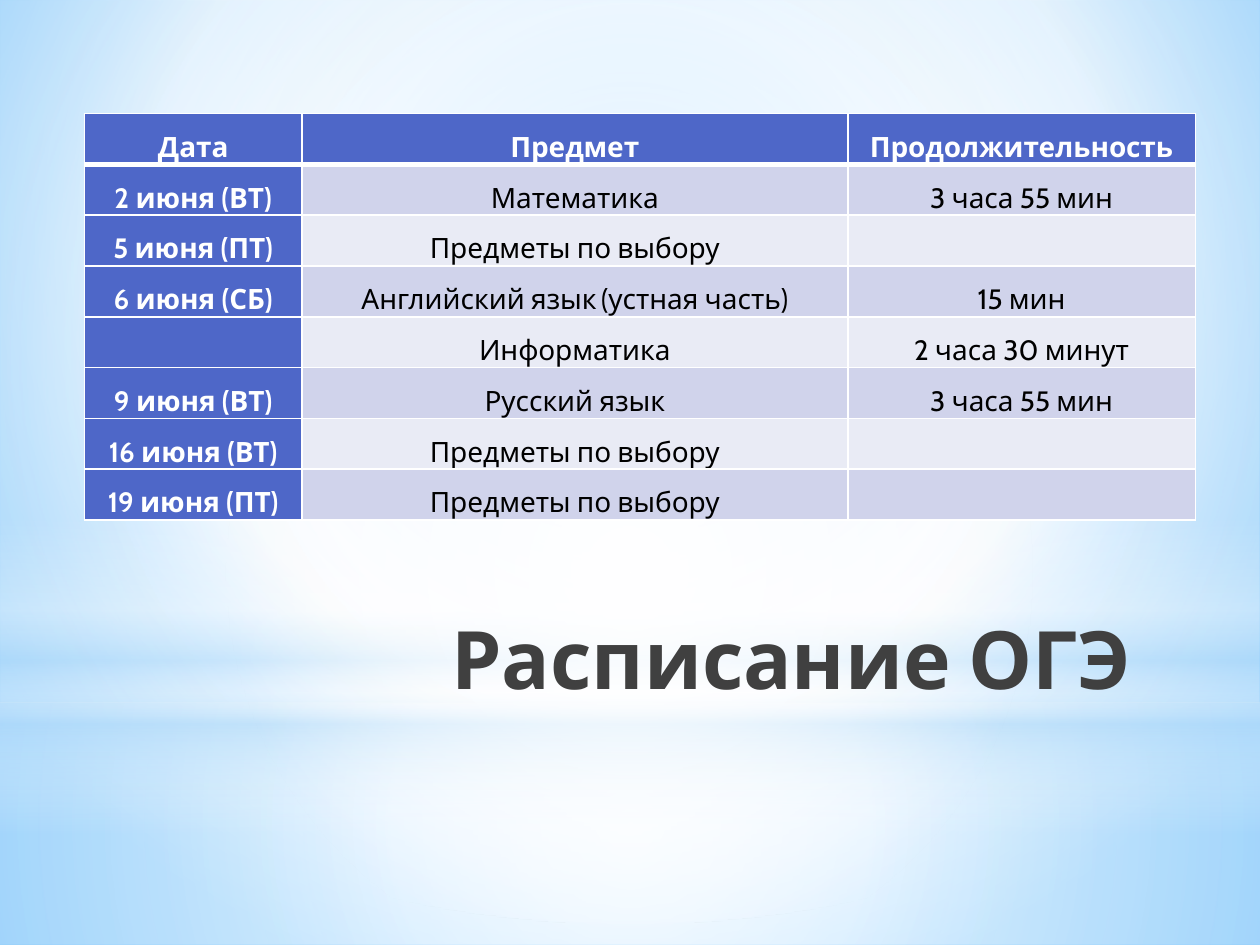
from dataclasses import dataclass

from lxml import etree
from pptx import Presentation
from pptx.dml.color import RGBColor
from pptx.enum.shapes import MSO_SHAPE
from pptx.enum.text import MSO_ANCHOR, PP_ALIGN
from pptx.oxml.ns import qn
from pptx.util import Cm, Pt

RECT, OVAL = MSO_SHAPE.RECTANGLE, MSO_SHAPE.OVAL
TOP = MSO_ANCHOR.TOP
CENTER, RIGHT = PP_ALIGN.CENTER, PP_ALIGN.RIGHT


@dataclass(frozen=True)
class Theme:
    font: str = "Cabin"
    title_size: float = 46
    body_size: float = 16
    gap_size: float = 11
    title: str = "404040"
    text: str = "000000"
    white: str = "FFFFFF"
    accent: str = "4E67C8"
    bands: tuple = ("D0D3EB", "E9EBF5")
    sky: str = "9ED5FF"
    deep_sky: str = "5BB9FF"
    haze: str = "B4DCFA"


THEME = Theme()
MIDDLE = (50, 50, 50, 50)
SCHEDULE = [
    ("Дата", "Предмет", "Продолжительность"),
    ("2 июня (ВТ)", "Математика", "3 часа 55 мин"),
    ("5 июня (ПТ)", "Предметы по выбору", ""),
    ("6 июня (СБ)",
     [("Английский язык", THEME.body_size), (" ", THEME.gap_size),
      ("(устная часть)", THEME.body_size)],
     "15 мин"),
    ("", "Информатика", "2 часа 30 минут"),
    ("9 июня (ВТ)", "Русский язык", "3 часа 55 мин"),
    ("16 июня (ВТ)", "Предметы по выбору", ""),
    ("19 июня (ПТ)", "Предметы по выбору", ""),
]


def write(tf, text, size, color, bold=False, align=CENTER, spacing=1.0):
    p = tf.paragraphs[0]
    p.alignment = align
    p.line_spacing = spacing
    p.font.size = Pt(size)
    runs = [(text, size)] if isinstance(text, str) else text
    for content, run_size in runs:
        if not content:
            continue
        r = p.add_run()
        r.text = content
        r.font.name = THEME.font
        r.font.size = Pt(run_size)
        r.font.bold = bold
        r.font.color.rgb = RGBColor.from_string(color)


def set_gradient(props, stops, focus=None):
    grad = etree.Element(qn("a:gradFill"), rotWithShape="1")
    gs_list = etree.SubElement(grad, qn("a:gsLst"))
    for pos, color, opacity in stops:
        gs = etree.SubElement(gs_list, qn("a:gs"), pos=str(pos * 1000))
        clr = etree.SubElement(gs, qn("a:srgbClr"), val=color)
        if opacity < 100:
            etree.SubElement(clr, qn("a:alpha"), val=str(opacity * 1000))
    if focus:
        circle = etree.SubElement(grad, qn("a:path"), path="circle")
        sides = {side: str(v * 1000) for side, v in zip("ltrb", focus)}
        etree.SubElement(circle, qn("a:fillToRect"), **sides)
    else:
        etree.SubElement(grad, qn("a:lin"), ang="5400000", scaled="0")
    props.replace(props.find(qn("a:solidFill")), grad)


def set_borders(cell, color, widths):
    tc_pr = cell._tc.get_or_add_tcPr()
    for i, (side, width) in enumerate(zip("LRTB", widths)):
        ln = etree.Element(qn(f"a:ln{side}"), w=str(Pt(width)))
        fill = etree.SubElement(ln, qn("a:solidFill"))
        etree.SubElement(fill, qn("a:srgbClr"), val=color)
        tc_pr.insert(i, ln)


class SlideBuilder:
    def __init__(self, prs, theme):
        self.theme = theme
        self.s = prs.slides.add_slide(prs.slide_layouts[5])

    def background(self, stops, focus):
        self.s.background.fill.solid()
        set_gradient(self.s._element.find(".//" + qn("p:bgPr")), stops, focus)

    def glow(self, shape, top, height, stops, focus=None):
        sp = self.s.shapes.add_shape(shape, 0, Cm(top), Cm(25.4), Cm(height))
        sp.shadow.inherit = False
        sp.line.fill.background()
        sp.fill.solid()
        set_gradient(sp._element.spPr, stops, focus)

    def title(self, text, left, top, width, height):
        sp = self.s.shapes.title
        sp.left, sp.top, sp.width, sp.height = map(Cm, (left, top, width, height))
        self.s.shapes._spTree.append(sp._element)
        tf = sp.text_frame
        tf.word_wrap = True
        tf.vertical_anchor = TOP
        write(tf, text, self.theme.title_size, self.theme.title, bold=True, align=RIGHT)

    def table(self, rows, left, top, col_widths, row_height):
        t = self.theme
        table = self.s.shapes.add_table(
            len(rows), len(col_widths), Cm(left), Cm(top),
            Cm(sum(col_widths)), Cm(row_height * len(rows))).table
        for col, width in zip(table.columns, col_widths):
            col.width = Cm(width)
        for i, row in enumerate(rows):
            table.rows[i].height = Cm(row_height)
            for j, text in enumerate(row):
                cell = table.cell(i, j)
                heading = i == 0 or j == 0
                fill = t.accent if heading else t.bands[(i - 1) % 2]
                cell.margin_left = cell.margin_right = Cm(0.18)
                cell.margin_top = cell.margin_bottom = 0
                cell.fill.solid()
                cell.fill.fore_color.rgb = RGBColor.from_string(fill)
                set_borders(cell, t.white, (1, 1, 3 if i == 1 else 1, 3 if i == 0 else 1))
                write(cell.text_frame, text, t.body_size,
                      t.white if heading else t.text, bold=heading, spacing=1.5)


def main():
    prs = Presentation()
    prs.slide_width, prs.slide_height = Cm(25.4), Cm(19.05)
    t = THEME
    b = SlideBuilder(prs, t)
    b.background([(0, t.sky, 100), (60, t.white, 100), (100, t.deep_sky, 100)],
                 (20, 10, 20, 60))
    b.glow(RECT, 14.17, 4.88,
           [(0, t.white, 91), (37, t.white, 76), (100, t.haze, 79)], MIDDLE)
    b.glow(RECT, 0, 14.17,
           [(0, t.white, 89), (48, t.white, 62), (100, t.haze, 79)], MIDDLE)
    b.glow(RECT, 10.46, 6.35,
           [(0, t.white, 0), (29, t.white, 30), (45, t.haze, 40),
            (55, t.white, 26), (65, t.haze, 60), (100, t.white, 0)])
    b.glow(OVAL, 4.45, 14.17, [(0, t.white, 100), (56, t.white, 0)], MIDDLE)
    b.title("Расписание ОГЭ", 4.98, 12.14, 18.08, 3.18)
    b.table(SCHEDULE, 1.7, 2.29, (4.39, 11, 7.01), 1.02)
    prs.save("out.pptx")


if __name__ == "__main__":
    main()
